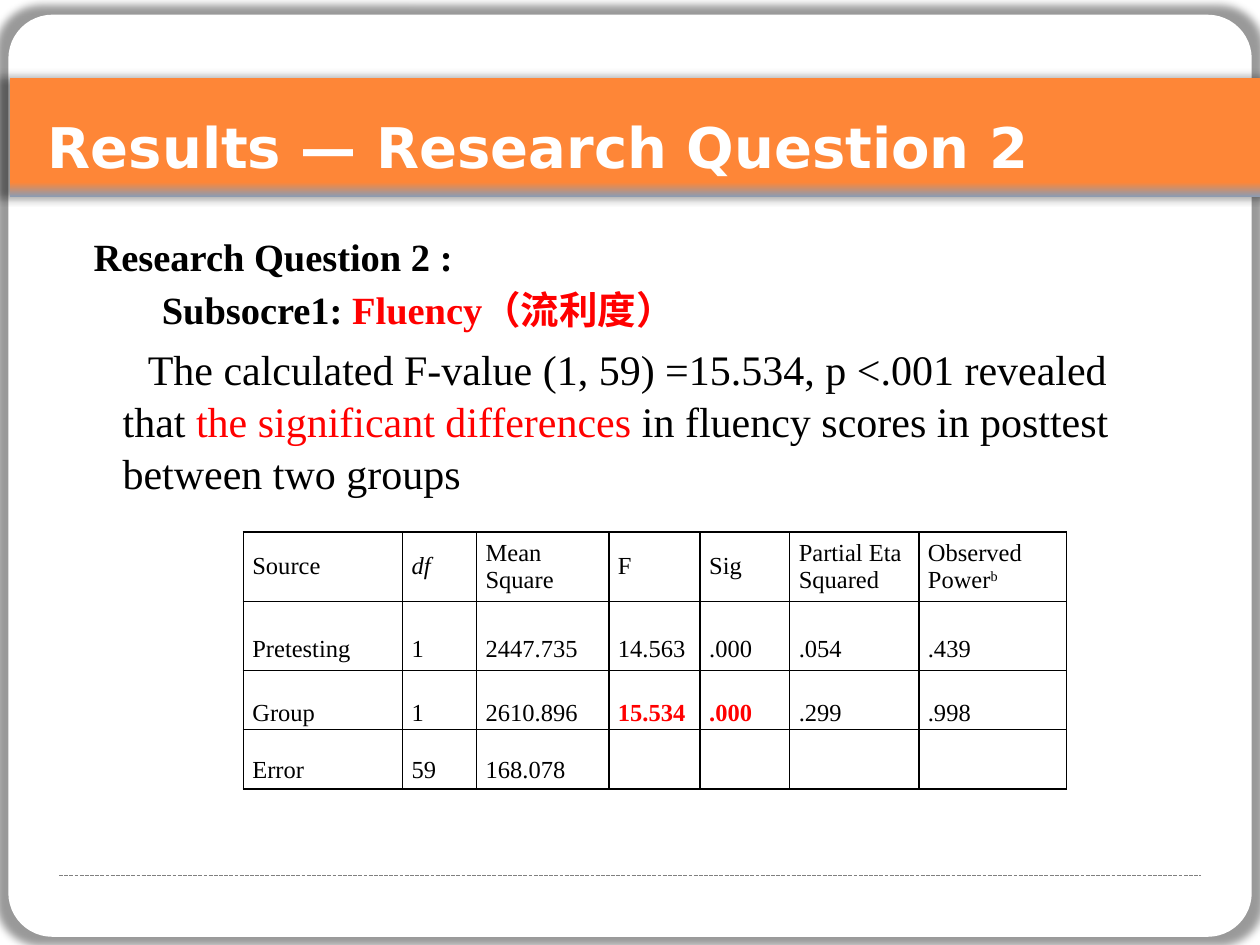
from lxml import etree
from pptx import Presentation
from pptx.dml.color import RGBColor
from pptx.enum.dml import MSO_LINE
from pptx.enum.shapes import MSO_CONNECTOR, MSO_SHAPE
from pptx.enum.text import MSO_ANCHOR
from pptx.oxml import parse_xml
from pptx.oxml.ns import nsdecls, qn
from pptx.util import Pt

ROUNDED, RECTANGLE = MSO_SHAPE.ROUNDED_RECTANGLE, MSO_SHAPE.RECTANGLE
STRAIGHT = MSO_CONNECTOR.STRAIGHT
MIDDLE, TOP = MSO_ANCHOR.MIDDLE, MSO_ANCHOR.TOP
DASH = MSO_LINE.SQUARE_DOT

WHITE, BLACK, RED, ORANGE = "FFFFFF", "000000", "FF0000", "FE8637"
SERIF, SANS = "Times New Roman", "DejaVu Sans"

HEADING = {"name": SERIF, "size": Pt(22), "bold": True}
BODY = {"name": SERIF, "size": Pt(24), "bold": False}
CELL = {"name": SERIF, "size": Pt(14), "bold": False}

COLUMN_WIDTHS = [91, 42.3, 75.6, 52.2, 51.2, 73.8, 84.4]
ROW_HEIGHTS = [39.6, 39.6, 33.8, 33.8]
HEADERS = ["Source", "df", "Mean Square", "F", "Sig", "Partial Eta Squared", "Observed"]
RESULTS = [
    ["Pretesting", "1", "2447.735", "14.563", ".000", ".054", ".439"],
    ["Group", "1", "2610.896", "15.534", ".000", ".299", ".998"],
    ["Error", "59", "168.078", "", "", "", ""],
]
SIGNIFICANT_CELLS = {(2, 3), (2, 4)}


def color(value):
    return RGBColor.from_string(value)


def points(*values):
    return [Pt(value) for value in values]


def set_attributes(target, formats):
    for name, value in formats.items():
        setattr(target, name, value)


def add_run(paragraph, text, font_format, font_color=BLACK):
    run = paragraph.add_run()
    run.text = text
    set_attributes(run.font, font_format)
    run.font.color.rgb = color(font_color)
    return run


def add_glow_shadow(shape):
    """Give the shape a soft centred shadow, slightly larger than itself."""
    shape.shadow.inherit = False
    effects = shape._element.spPr.find(qn("a:effectLst"))
    effects.append(parse_xml(
        f'<a:outerShdw {nsdecls("a")} blurRad="{Pt(5)}" sx="102000" sy="102000"'
        ' algn="ctr" rotWithShape="0"><a:srgbClr val="000000">'
        '<a:alpha val="40000"/></a:srgbClr></a:outerShdw>'))


def add_card(slide, left, top, width, height):
    card = slide.shapes.add_shape(ROUNDED, *points(left, top, width, height))
    card.adjustments[0] = 0.046
    card.fill.solid()
    card.fill.fore_color.rgb = color(WHITE)
    card.line.color.rgb = color(WHITE)
    card.line.width = Pt(2)
    add_glow_shadow(card)


def add_footer_rule(slide, left, top, width):
    rule = slide.shapes.add_connector(STRAIGHT, *points(left, top, left + width, top))
    rule.line.color.rgb = color("808080")
    rule.line.width = Pt(0.75)
    rule.line.dash_style = DASH
    etree.SubElement(rule._element.spPr, qn("a:effectLst"))


def add_text_frame(slide, left, top, width, height, wrap):
    frame = slide.shapes.add_textbox(*points(left, top, width, height)).text_frame
    frame.word_wrap = wrap
    return frame


def add_title_band(slide, left, top, width, height):
    band = slide.shapes.add_shape(RECTANGLE, *points(left, top, width, height))
    band.fill.gradient()
    band.fill.gradient_angle = 270
    stops = [(0.88, ORANGE), (1, "8E9BB0")]
    for stop, (position, stop_color) in zip(band.fill.gradient_stops, stops):
        stop.position = position
        stop.color.rgb = color(stop_color)
    band.line.fill.background()
    add_glow_shadow(band)

    frame = add_text_frame(slide, left + 14.4, top + 15.9, 576, 46, wrap=False)
    title_format = {"name": SANS, "size": Pt(32), "bold": True}
    add_run(frame.paragraphs[0], "Results — Research Question 2", title_format, WHITE)


def add_findings(slide, left, top, width, height):
    frame = add_text_frame(slide, left, top, width, height, wrap=True)
    # Each entry: left margin, first-line indent, space before, line spacing, format, runs
    entries = [
        (10.5, 0, 0, 1, HEADING, [("Research Question 2 :", BLACK)]),
        (49.4, 0, 4.4, 1, HEADING, [("Subsocre1:", BLACK), (" Fluency（流利度）", RED)]),
        (27, 14.4, 4.8, 1.04, BODY, [
            ("The calculated F-value (1, 59) =15.534, p <.001 revealed that ", BLACK),
            ("the significant differences ", RED),
            ("in fluency scores in posttest between two groups", BLACK)]),
    ]
    for index, (margin, indent, before, spacing, font_format, runs) in enumerate(entries):
        paragraph = frame.add_paragraph() if index else frame.paragraphs[0]
        properties = paragraph._p.get_or_add_pPr()
        properties.set("marL", str(Pt(margin)))
        properties.set("indent", str(Pt(indent)))
        paragraph.space_before = Pt(before)
        paragraph.line_spacing = spacing
        for text, font_color in runs:
            add_run(paragraph, text, font_format, font_color)


def add_cell_borders(cell):
    properties = cell._tc.get_or_add_tcPr()
    for index, side in enumerate(("lnL", "lnR", "lnT", "lnB")):
        properties.insert(index, parse_xml(
            f'<a:{side} {nsdecls("a")} w="{Pt(1)}"><a:solidFill>'
            f'<a:srgbClr val="{BLACK}"/></a:solidFill></a:{side}>'))


def add_results_table(slide, left, top):
    rows = [HEADERS] + RESULTS
    frame = slide.shapes.add_table(
        len(rows), len(HEADERS),
        *points(left, top, sum(COLUMN_WIDTHS), sum(ROW_HEIGHTS)))
    table = frame.table
    set_attributes(table, {"first_row": False, "horz_banding": False})
    for column, width in zip(table.columns, COLUMN_WIDTHS):
        column.width = Pt(width)
    for row, height in zip(table.rows, ROW_HEIGHTS):
        row.height = Pt(height)

    cell_format = {"margin_left": Pt(5.2), "margin_right": Pt(5.2),
                   "margin_top": 0, "margin_bottom": 0}
    last_row = len(rows) - 1
    for row_index, values in enumerate(rows):
        for column_index, text in enumerate(values):
            cell = table.cell(row_index, column_index)
            set_attributes(cell, cell_format)
            cell.vertical_anchor = TOP if row_index == last_row else MIDDLE
            cell.fill.background()
            add_cell_borders(cell)
            paragraph = cell.text_frame.paragraphs[0]
            if not text:
                paragraph.font.size = CELL["size"]
                continue
            significant = (row_index, column_index) in SIGNIFICANT_CELLS
            run = add_run(paragraph, text, CELL, RED if significant else BLACK)
            run.font.bold = significant
            run.font.italic = text == "df"
            if row_index:
                paragraph.line_spacing = 2.0

    power = table.cell(0, len(HEADERS) - 1).text_frame.add_paragraph()
    add_run(power, "Power", CELL)
    footnote_mark = add_run(power, "b", CELL)
    footnote_mark.font._element.set("baseline", "30000")


def main():
    presentation = Presentation()
    presentation.slide_width, presentation.slide_height = points(720, 540)
    slide = presentation.slides.add_slide(presentation.slide_layouts[6])
    add_card(slide, 5.8, 9.4, 708.5, 524.9)
    add_footer_rule(slide, 33.8, 500.4, 652.4)
    add_title_band(slide, 5.8, 44.6, 714.2, 67.7)
    add_findings(slide, 36, 129.4, 624.2, 160)
    add_results_table(slide, 139, 304)
    presentation.save("out.pptx")


if __name__ == "__main__":
    main()
